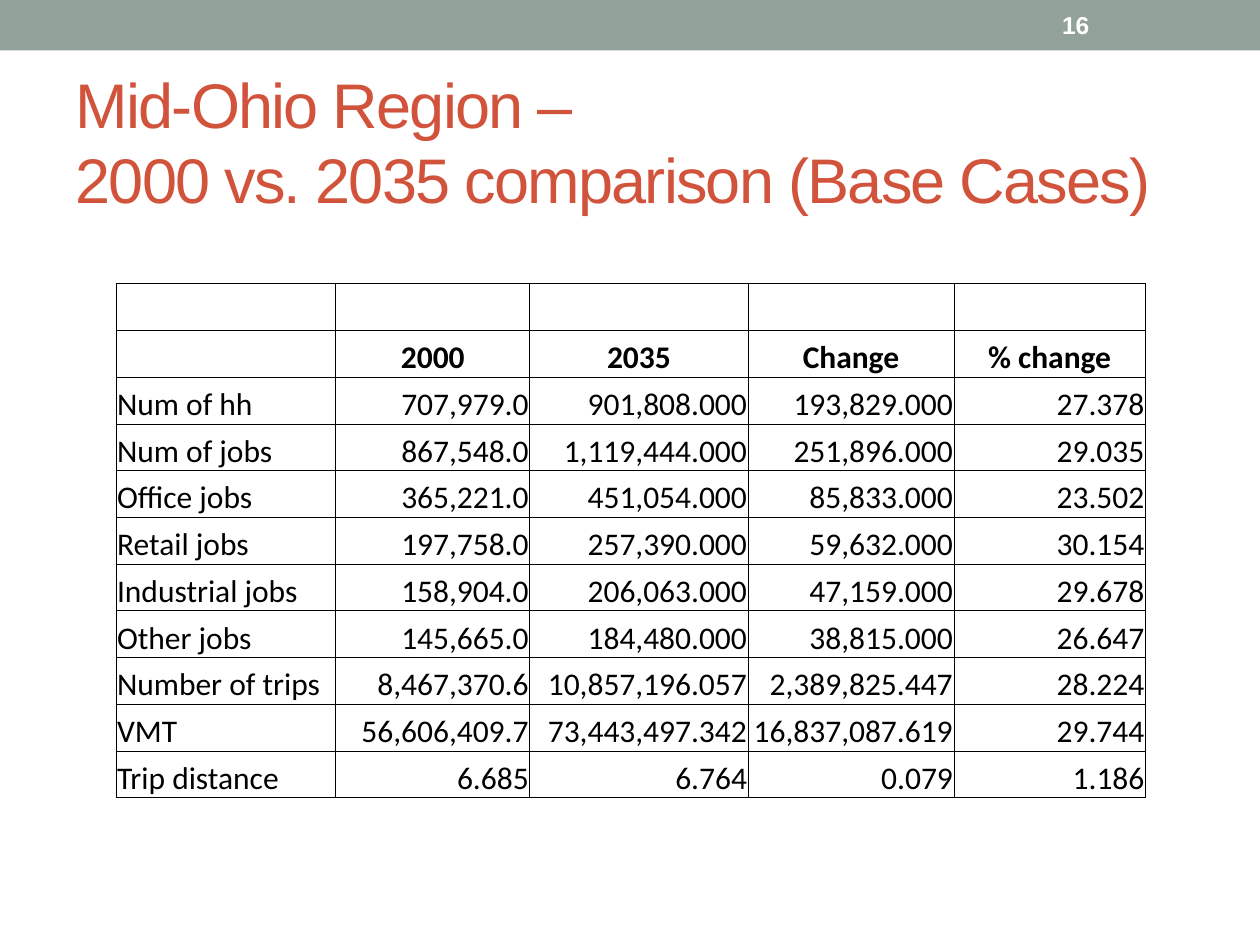
from lxml import etree
from pptx import Presentation
from pptx.dml.color import RGBColor
from pptx.enum.shapes import MSO_SHAPE
from pptx.enum.text import MSO_ANCHOR, MSO_AUTO_SIZE, PP_ALIGN
from pptx.oxml import parse_xml
from pptx.oxml.ns import nsdecls
from pptx.util import Cm, Pt

RECTANGLE = MSO_SHAPE.RECTANGLE
MIDDLE, BOTTOM = MSO_ANCHOR.MIDDLE, MSO_ANCHOR.BOTTOM
LEFT, CENTER, RIGHT = PP_ALIGN.LEFT, PP_ALIGN.CENTER, PP_ALIGN.RIGHT
NO_AUTOFIT = MSO_AUTO_SIZE.NONE

SAGE = RGBColor(0x93, 0xA2, 0x99)
RUST = RGBColor(0xD2, 0x53, 0x3C)
WHITE = RGBColor(0xFF, 0xFF, 0xFF)
BLACK = RGBColor(0x00, 0x00, 0x00)

COLUMN_WIDTHS = [4.43, 3.91, 4.4, 4.15, 3.86]
COMPARISON = [
    ["", "", "", "", ""],
    ["", "2000", "2035", "Change", "% change"],
    ["Num of hh", "707,979.0", "901,808.000", "193,829.000", "27.378"],
    ["Num of jobs", "867,548.0", "1,119,444.000", "251,896.000", "29.035"],
    ["Office jobs", "365,221.0", "451,054.000", "85,833.000", "23.502"],
    ["Retail jobs", "197,758.0", "257,390.000", "59,632.000", "30.154"],
    ["Industrial jobs", "158,904.0", "206,063.000", "47,159.000", "29.678"],
    ["Other jobs", "145,665.0", "184,480.000", "38,815.000", "26.647"],
    ["Number of trips", "8,467,370.6", "10,857,196.057", "2,389,825.447", "28.224"],
    ["VMT", "56,606,409.7", "73,443,497.342", "16,837,087.619", "29.744"],
    ["Trip distance", "6.685", "6.764", "0.079", "1.186"],
]
HEADER_ROW = 1


def set_font(paragraph, name, size, color, bold=False):
    font = paragraph.font
    font.name, font.size, font.bold = name, Pt(size), bold
    font.color.rgb = color


def add_borders(cell):
    properties = cell._tc.get_or_add_tcPr()
    for side in ("lnL", "lnR", "lnT", "lnB"):
        border = parse_xml(f'<a:{side} {nsdecls("a")} w="{Pt(0.5)}"><a:solidFill/></a:{side}>')
        etree.SubElement(border[0], border[0].tag.replace("solidFill", "srgbClr"), val=str(BLACK))
        properties.append(border)


prs = Presentation()
prs.slide_width, prs.slide_height = Cm(25.4), Cm(19.05)
slide = prs.slides.add_slide(prs.slide_layouts[5])

band = slide.shapes.add_shape(RECTANGLE, 0, 0, prs.slide_width, Cm(1.02))
band.shadow.inherit = False
band.fill.solid()
band.fill.fore_color.rgb = SAGE
band.line.fill.background()

title = slide.shapes.title
title.left, title.top, title.width, title.height = Cm(1.27), Cm(1.47), Cm(22.86), Cm(2.74)
title.text_frame.text = "Mid-Ohio Region – \v2000 vs. 2035 comparison (Base Cases)"
title.text_frame.vertical_anchor = MIDDLE
title.text_frame.auto_size = NO_AUTOFIT
heading = title.text_frame.paragraphs[0]
heading.alignment = LEFT
set_font(heading, "Arial", 36, RUST)
heading._p.get_or_add_pPr().get_or_add_defRPr().set("spc", "-100")

page_number = slide.shapes.add_textbox(Cm(21.16), Cm(0.05), Cm(2.97), Cm(0.91)).text_frame
page_number.word_wrap = True
page_number.vertical_anchor = MIDDLE
page_number.text = "16"
set_font(page_number.paragraphs[0], "Arial", 14, WHITE, bold=True)

table = slide.shapes.add_table(
    len(COMPARISON), len(COLUMN_WIDTHS), Cm(2.34), Cm(5.72), Cm(20.75), Cm(10.37)
).table
table.first_row = table.horz_banding = False
for column, width in zip(table.columns, COLUMN_WIDTHS):
    column.width = Cm(width)

for r, row in enumerate(COMPARISON):
    for c, text in enumerate(row):
        cell = table.cell(r, c)
        add_borders(cell)
        cell.fill.background()
        cell.margin_left = cell.margin_right = cell.margin_top = Cm(0.02)
        cell.margin_bottom = 0
        cell.vertical_anchor = BOTTOM
        cell.text = text
        entry = cell.text_frame.paragraphs[0]
        entry.alignment = CENTER if r == HEADER_ROW else RIGHT if c else LEFT
        set_font(entry, "Calibri", 18, BLACK, bold=r == HEADER_ROW)

prs.save("out.pptx")
